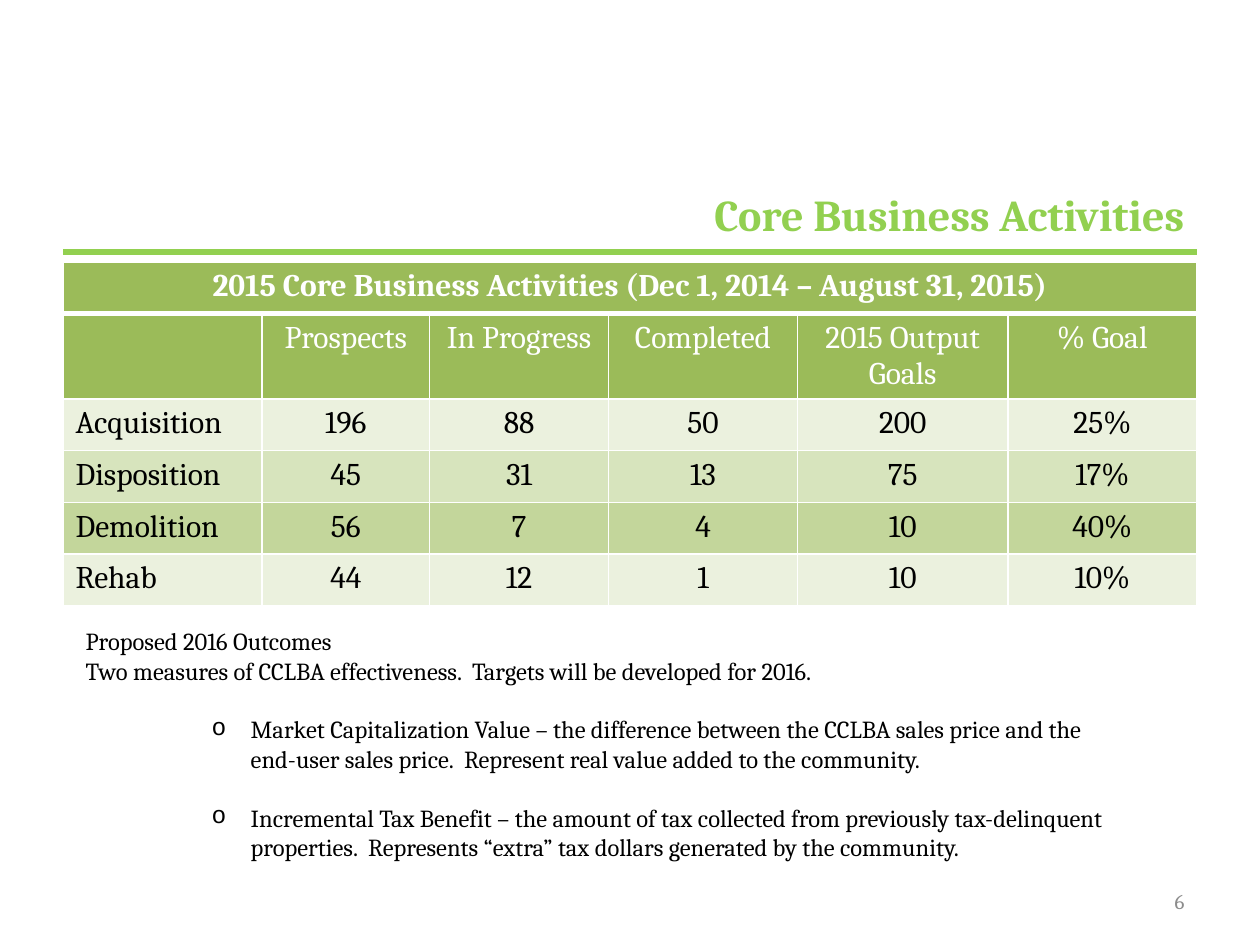
from lxml.etree import SubElement
from pptx import Presentation
from pptx.dml.color import RGBColor
from pptx.enum.shapes import MSO_CONNECTOR as Connector
from pptx.enum.text import MSO_ANCHOR as Anchor, MSO_AUTO_SIZE as AutoSize, PP_ALIGN as Align
from pptx.oxml.ns import qn
from pptx.util import Inches, Pt

COLORS = {
    "accent": "92D050", "header": "9BBB59", "white": "FFFFFF", "black": "000000",
    "number": "8C8C8C", "light": "EBF1DE", "medium": "D7E4BD", "strong": "C3D69B",
}
COLUMN_WIDTHS = [1.58, 1.33, 1.42, 1.5, 1.67, 1.5]
ROW_HEIGHTS = [0.41, 0.47, 0.41, 0.41, 0.41, 0.41]
ROW_FILLS = ["header", "header", "light", "medium", "strong", "light"]
ROWS = [
    ["2015 Core Business Activities (Dec 1, 2014 – August 31, 2015)"] + [""] * 5,
    ["", "Prospects", "In Progress", "Completed", "2015 Output Goals", "% Goal"],
    ["Acquisition", "196", "88", "50", "200", "25%"],
    ["Disposition", "45", "31", "13", "75", "17%"],
    ["Demolition", "56", "7", "4", "10", "40%"],
    ["Rehab", "44", "12", "1", "10", "10%"],
]
INTRODUCTION = [
    "Proposed 2016 Outcomes",
    "Two measures of CCLBA effectiveness.  Targets will be developed for 2016.",
]
MEASURES = [
    "Market Capitalization Value – the difference between the CCLBA sales price and the "
    "end-user sales price.  Represent real value added to the community.",
    "Incremental Tax Benefit – the amount of tax collected from previously tax-delinquent "
    "properties.  Represents “extra” tax dollars generated by the community.",
]


def rgb(name):
    """Return the named colour."""
    return RGBColor.from_string(COLORS[name])


def set_attributes(target, values):
    """Set each named attribute on the target."""
    for name, value in values.items():
        setattr(target, name, value)


def format_paragraph(paragraph, size, color, bold=False, **layout):
    """Apply font and paragraph settings."""
    set_attributes(paragraph, layout)
    set_attributes(paragraph.font, {"name": "Cambria", "size": Pt(size), "bold": bold})
    paragraph.font.color.rgb = rgb(color)


def place(shape, left, top, width, height, **frame):
    """Position a text shape and set its text frame."""
    box = zip(("left", "top", "width", "height"), (left, top, width, height))
    set_attributes(shape, {name: Inches(value) for name, value in box})
    set_attributes(shape.text_frame, {"word_wrap": True, "auto_size": AutoSize.NONE, **frame})


def add_title(slide):
    """Fill the title placeholder."""
    title = slide.shapes.title
    place(title, 0.5, 1, 9, 1, vertical_anchor=Anchor.BOTTOM, margin_bottom=Inches(0.09))
    title.text_frame.text = "Core Business Activities"
    format_paragraph(title.text_frame.paragraphs[0], 25.2, "accent", True, alignment=Align.RIGHT)


def add_rule(slide):
    """Draw the line below the title."""
    rule = slide.shapes.add_connector(
        Connector.STRAIGHT, Inches(0.5), Inches(2), Inches(9.5), Inches(2))
    rule.line.color.rgb = rgb("accent")
    rule.line.width = Pt(3)
    SubElement(rule._element.spPr, qn("a:effectLst"))


def add_borders(cell, row):
    """Draw white cell borders, heavier below the heading row."""
    properties = cell._tc.get_or_add_tcPr()
    widths = {"L": 1, "R": 1, "T": 3 if row == 1 else 1, "B": 3 if row == 0 else 1}
    for side, width in widths.items():
        line = SubElement(properties, qn(f"a:ln{side}"), w=str(Pt(width)))
        SubElement(SubElement(line, qn("a:solidFill")), qn("a:srgbClr"), val=COLORS["white"])


def add_activity_table(slide):
    """Build the activity table."""
    table = slide.shapes.add_table(
        len(ROWS), len(COLUMN_WIDTHS), Inches(0.5), Inches(2.08),
        Inches(sum(COLUMN_WIDTHS)), Inches(sum(ROW_HEIGHTS))).table
    for column, width in zip(table.columns, COLUMN_WIDTHS):
        column.width = Inches(width)
    for row, height in zip(table.rows, ROW_HEIGHTS):
        row.height = Inches(height)
    table.cell(0, 0).merge(table.cell(0, len(COLUMN_WIDTHS) - 1))
    for row, values in enumerate(ROWS):
        for column, value in enumerate(values):
            cell = table.cell(row, column)
            add_borders(cell, row)
            cell.fill.solid()
            cell.fill.fore_color.rgb = rgb(ROW_FILLS[row])
            cell.text = value
            centred = row < 2 or column > 0
            format_paragraph(
                cell.text_frame.paragraphs[0], 18, "white" if row < 2 else "black", row == 0,
                alignment=Align.CENTER if centred else Align.LEFT)


def set_bullet(paragraph, margin=0, indent=0, character=None):
    """Set the paragraph indent and its bullet, if any."""
    properties = paragraph._p.get_or_add_pPr()
    properties.set("marL", str(Inches(margin)))
    properties.set("indent", str(Inches(indent)))
    if character:
        SubElement(properties, qn("a:buFont"), typeface="Courier New")
        SubElement(properties, qn("a:buChar"), char=character)
    else:
        SubElement(properties, qn("a:buNone"))


def add_outcomes(slide):
    """Fill the body placeholder with the outcomes."""
    body = slide.placeholders[1]
    place(body, 0.58, 4.92, 8.5, 2.22, vertical_anchor=Anchor.TOP)
    body.text_frame.text = "\n".join(INTRODUCTION + MEASURES)
    for index, paragraph in enumerate(body.text_frame.paragraphs):
        is_measure = index >= len(INTRODUCTION)
        if is_measure:
            paragraph.level = 2
            set_bullet(paragraph, 1.31, -0.31, "o")
        else:
            set_bullet(paragraph)
        format_paragraph(
            paragraph, 14, "black", alignment=Align.LEFT,
            space_before=Pt(16.8 if is_measure else 0))


def add_slide_number(slide):
    """Add the slide number."""
    number = slide.shapes.add_textbox(0, 0, 0, 0)
    place(number, 7.17, 6.95, 2.33, 0.4, vertical_anchor=Anchor.MIDDLE)
    number.text_frame.text = "6"
    format_paragraph(number.text_frame.paragraphs[0], 12, "number", alignment=Align.RIGHT)


def main():
    """Build and save the slide."""
    presentation = Presentation()
    set_attributes(presentation, {"slide_width": Inches(10), "slide_height": Inches(7.5)})
    slide = presentation.slides.add_slide(presentation.slide_layouts[1])
    for add_element in (add_rule, add_title, add_activity_table, add_outcomes, add_slide_number):
        add_element(slide)
    presentation.save("out.pptx")


if __name__ == "__main__":
    main()
